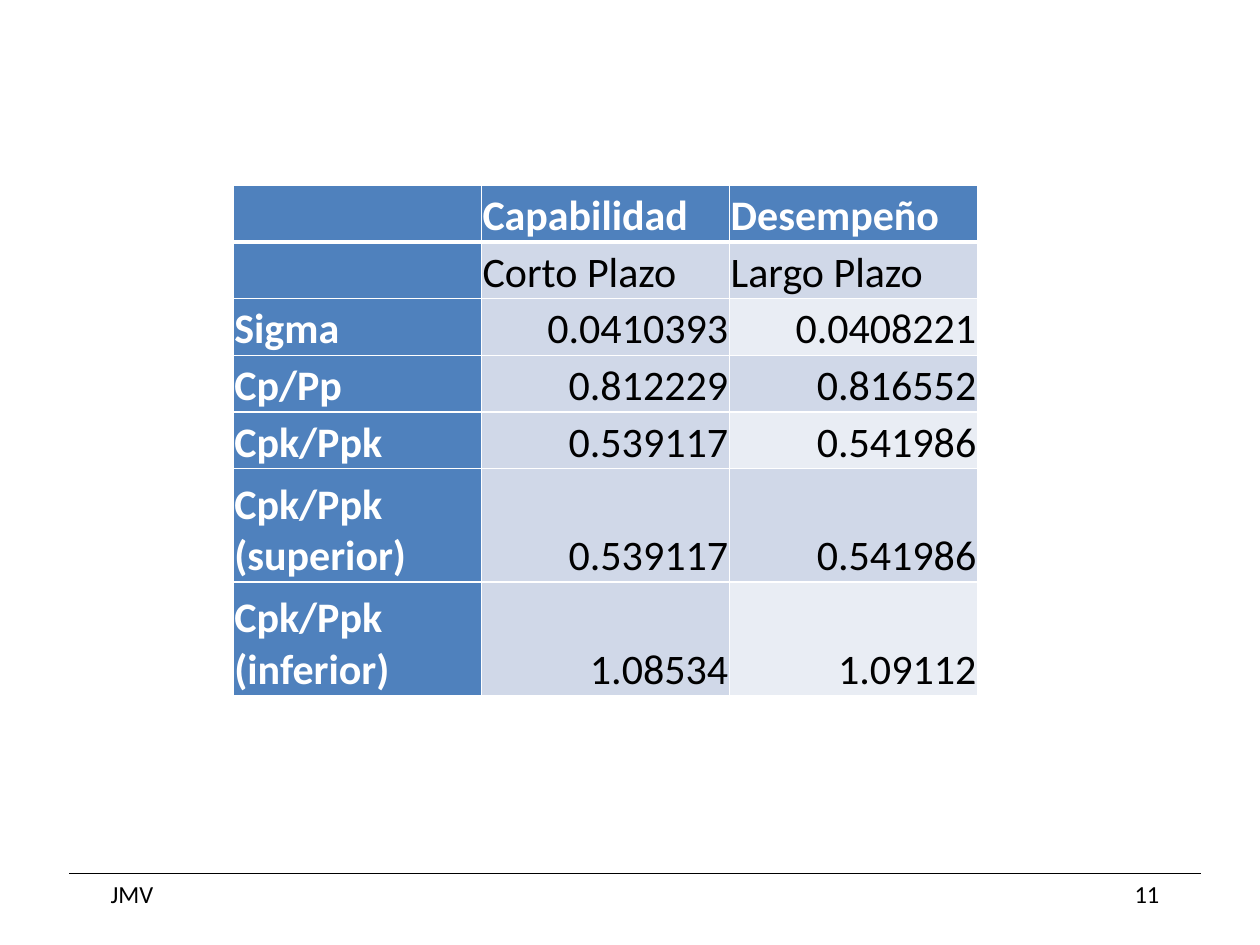
from typing import NamedTuple

from lxml import etree
from pptx import Presentation
from pptx.dml.color import RGBColor
from pptx.enum.shapes import MSO_CONNECTOR
from pptx.enum.text import MSO_ANCHOR, PP_ALIGN
from pptx.oxml.ns import qn
from pptx.util import Inches, Pt

LEFT, RIGHT = PP_ALIGN.LEFT, PP_ALIGN.RIGHT
BOTTOM = MSO_ANCHOR.BOTTOM
STRAIGHT = MSO_CONNECTOR.STRAIGHT

BLACK = RGBColor(0x00, 0x00, 0x00)
WHITE = RGBColor(0xFF, 0xFF, 0xFF)
BLUE = RGBColor(0x4F, 0x81, 0xBD)
BAND_DARK = RGBColor(0xD0, 0xD8, 0xE8)
BAND_LIGHT = RGBColor(0xE9, 0xED, 0xF4)

FONT = "Calibri"
SLIDE_W, SLIDE_H = Inches(10), Inches(7.5)
FOOTER_TOP = 0.924  # share of the slide's height
COL_W, ROW_H = Inches(1.97), Inches(0.45)


class Row(NamedTuple):
    label: str
    short_term: str
    long_term: str
    height: int = 1  # in grid rows


class Footer(NamedTuple):
    text: str
    left: float  # share of the slide's width
    align: PP_ALIGN


ROWS = [
    Row("", "Capabilidad", "Desempeño"),
    Row("", "Corto Plazo", "Largo Plazo"),
    Row("Sigma", "0.0410393", "0.0408221"),
    Row("Cp/Pp", "0.812229", "0.816552"),
    Row("Cpk/Ppk", "0.539117", "0.541986"),
    Row("Cpk/Ppk (superior)", "0.539117", "0.541986", 2),
    Row("Cpk/Ppk (inferior)", "1.08534", "1.09112", 2),
]
FOOTERS = [Footer("JMV", 0.078, LEFT), Footer("11", 0.711, RIGHT)]


def set_text(tf, text: str, size: int, color: RGBColor, align: PP_ALIGN, bold: bool = False) -> None:
    p = tf.paragraphs[0]
    p.text = text
    p.alignment = align
    for r in p.runs:
        r.font.name, r.font.size, r.font.bold = FONT, Pt(size), bold
        r.font.color.rgb = color


def set_borders(cell, bottom: float) -> None:
    """Draw white borders, 1 pt wide except for the bottom one."""
    tc_pr = cell._tc.get_or_add_tcPr()
    for side, width in (("L", 1), ("R", 1), ("T", 1), ("B", bottom)):
        ln = etree.SubElement(tc_pr, qn(f"a:ln{side}"), w=str(Pt(width)))
        fill = etree.SubElement(ln, qn("a:solidFill"))
        etree.SubElement(fill, qn("a:srgbClr"), val=str(WHITE))


def cell_fill(row: int, col: int) -> RGBColor:
    if row == 0 or col == 0:
        return BLUE
    return BAND_LIGHT if col == 2 and row % 2 == 0 else BAND_DARK


def add_capability_table(s) -> None:
    height = ROW_H * sum(row.height for row in ROWS)
    table = s.shapes.add_table(len(ROWS), 3, Inches(1.85), Inches(1.47), COL_W * 3, height).table
    for column in table.columns:
        column.width = COL_W
    for i, row in enumerate(ROWS):
        table.rows[i].height = ROW_H * row.height
        for j, text in enumerate((row.label, row.short_term, row.long_term)):
            cell = table.cell(i, j)
            header = i == 0 or j == 0
            set_borders(cell, bottom=3 if i == 0 else 1)
            cell.fill.solid()
            cell.fill.fore_color.rgb = cell_fill(i, j)
            cell.vertical_anchor = BOTTOM
            cell.margin_left = cell.margin_right = cell.margin_top = Inches(0.01)
            cell.margin_bottom = 0
            align = RIGHT if i > 1 and j > 0 else LEFT
            set_text(cell.text_frame, text, 24, WHITE if header else BLACK, align, header)


def add_footer(s, footer: Footer) -> None:
    sp = s.shapes.add_textbox(int(SLIDE_W * footer.left), int(SLIDE_H * FOOTER_TOP),
                              Inches(2.19), Inches(0.34))
    sp.text_frame.word_wrap = True
    set_text(sp.text_frame, footer.text, 14, BLACK, footer.align)


def add_footer_rule(s) -> None:
    y = int(SLIDE_H * FOOTER_TOP)
    line = s.shapes.add_connector(STRAIGHT, int(SLIDE_W * 0.055), y, int(SLIDE_W * 0.953), y)
    line.line.color.rgb = BLACK
    line.line.width = Pt(0.75)
    etree.SubElement(line._element.spPr, qn("a:effectLst"))


def main() -> None:
    prs = Presentation()
    prs.slide_width, prs.slide_height = SLIDE_W, SLIDE_H
    s = prs.slides.add_slide(prs.slide_layouts[6])
    for footer in FOOTERS:
        add_footer(s, footer)
    add_footer_rule(s)
    add_capability_table(s)
    prs.save("out.pptx")


if __name__ == "__main__":
    main()
